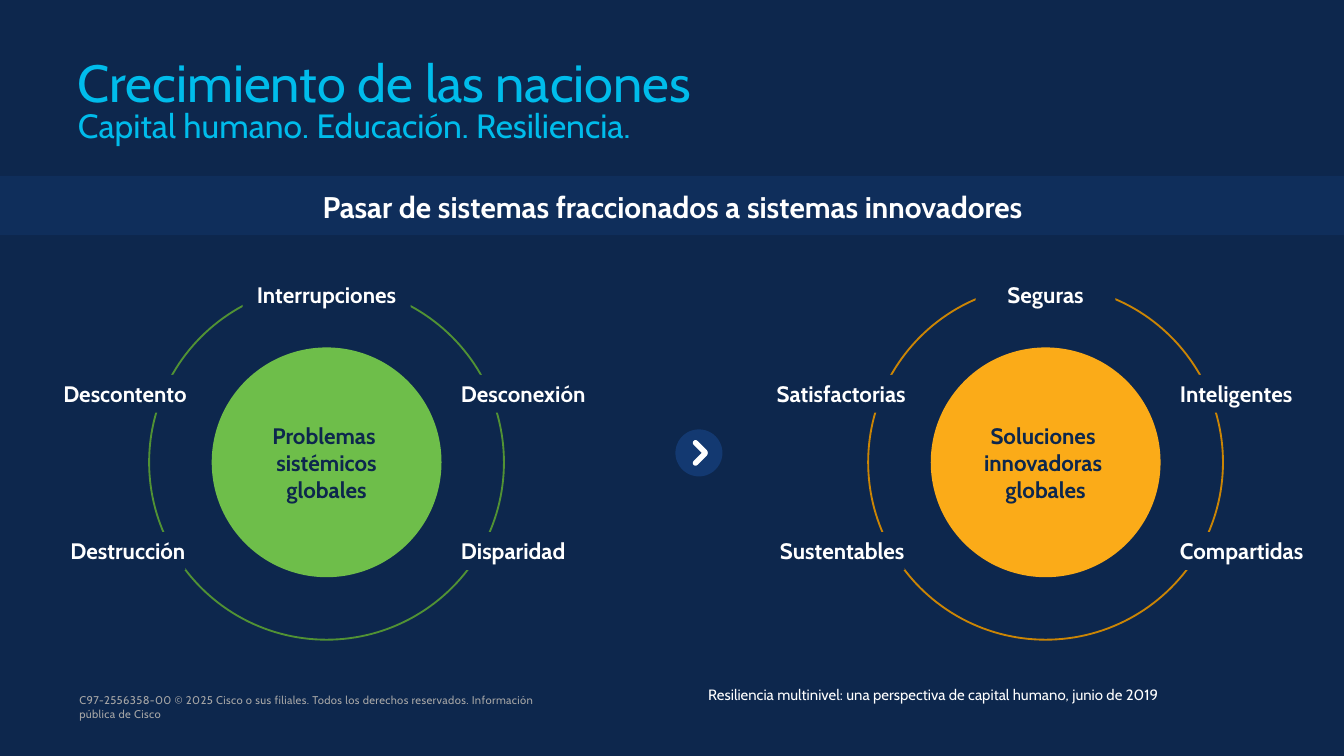
from lxml import etree
from pptx import Presentation
from pptx.dml.color import RGBColor
from pptx.enum.shapes import MSO_SHAPE
from pptx.enum.text import MSO_ANCHOR, MSO_AUTO_SIZE, PP_ALIGN
from pptx.oxml.ns import qn
from pptx.util import Inches, Pt

RECTANGLE, OVAL, ROUNDED = MSO_SHAPE.RECTANGLE, MSO_SHAPE.OVAL, MSO_SHAPE.ROUNDED_RECTANGLE
LEFT, CENTER, RIGHT = PP_ALIGN.LEFT, PP_ALIGN.CENTER, PP_ALIGN.RIGHT
TOP, MIDDLE, BOTTOM = MSO_ANCHOR.TOP, MSO_ANCHOR.MIDDLE, MSO_ANCHOR.BOTTOM
NO_FIT, GROW = MSO_AUTO_SIZE.NONE, MSO_AUTO_SIZE.SHAPE_TO_FIT_TEXT

FONT = "Cabin"
COLORS = {
    "navy": "0D274D", "blue": "133971", "cyan": "00BCEB", "white": "FFFFFF", "gray": "A6A6A6",
    "green": "6EBE4A", "dark green": "519234", "orange": "FBAB18", "dark orange": "CB8504",
}

TITLE = [("Crecimiento de las naciones", 28), ("Capital humano. Educación. Resiliencia.", 18)]
BANNER = "Pasar de sistemas fraccionados a sistemas innovadores"
SOURCE = "Resiliencia multinivel: una perspectiva de capital humano, junio de 2019"
COPYRIGHT = ("C97-2556358-00 © 2025 Cisco o sus filiales. Todos los derechos reservados. "
             "Información pública de Cisco")

# Labels are (text, width), in the order of LABEL_PLACES
WHEELS = [
    {"center": 2.43, "fill": "green", "ring": "dark green",
     "core": ["Problemas ", "sistémicos", "globales"],
     "labels": [("Descontento", 1.04), ("Interrupciones", 1.25), ("Desconexión", 1.21),
                ("Disparidad", 0.98), ("Destrucción", 0.9)]},
    {"center": 7.78, "fill": "orange", "ring": "dark orange",
     "core": ["Soluciones ", "innovadoras ", "globales"],
     "labels": [("Satisfactorias", 1.22), ("Seguras", 1.04), ("Inteligentes", 1.03),
                ("Compartidas", 1.03), ("Sustentables", 1.09)]},
]
# Anchor offset from the wheel center, top, alignment
LABEL_PLACES = [(-1.04, 2.79, RIGHT), (0, 2.05, CENTER), (1, 2.79, LEFT),
                (1, 3.96, LEFT), (-1.05, 3.96, RIGHT)]
WIDTH_SHARE = {LEFT: 0, CENTER: 0.5, RIGHT: 1}
WHEEL_Y, CORE_SIZE, RING_SIZE, LABEL_HEIGHT = 3.44, 1.71, 2.64, 0.28

ARROW_X, ARROW_Y, ARROW_SIZE = 5.2, 3.37, 0.35
BAR_X, BAR_LENGTH, BAR_WIDTH = 5.21, 0.14, 0.04
BARS = [(3.33, 45), (3.41, -45)]


def color(name):
    return RGBColor.from_string(COLORS[name])


def write(box, lines, tint="white", bold=False, align=LEFT, anchor=TOP, insets=(0, 0),
          wrap=True, fit=NO_FIT, leading=None, tracking=None):
    """Fill a box with one paragraph of (text, size) lines separated by line breaks."""
    frame = box.text_frame
    frame.word_wrap, frame.auto_size, frame.vertical_anchor = wrap, fit, anchor
    frame.margin_left = frame.margin_right = Inches(insets[0])
    frame.margin_top = frame.margin_bottom = Inches(insets[1])
    para = frame.paragraphs[0]
    para.alignment = align
    if leading:
        para.line_spacing = leading
    for index, (text, size) in enumerate(lines):
        if index:
            para.add_line_break()
        span = para.add_run()
        span.text = text
        span.font.name, span.font.size, span.font.bold = FONT, Pt(size), bold
        span.font.color.rgb = color(tint)
        if tracking:
            span.font._element.set("spc", str(tracking))


def add_text(page, left, top, width, height, lines, **style):
    box = page.shapes.add_textbox(Inches(left), Inches(top), Inches(width), Inches(height))
    write(box, lines, **style)


def add_shape(page, kind, left, top, width, height, fill=None, line=None):
    shape = page.shapes.add_shape(kind, Inches(left), Inches(top), Inches(width), Inches(height))
    shape.shadow.inherit = False
    if fill:
        shape.fill.solid()
        shape.fill.fore_color.rgb = color(fill)
    else:
        shape.fill.background()
    if line:
        shape.line.color.rgb = color(line)
        shape.line.width = Pt(1)
    else:
        shape.line.fill.background()
    return shape


def add_centered(page, kind, x, y, width, height, **style):
    return add_shape(page, kind, x - width / 2, y - height / 2, width, height, **style)


def add_wheel(page, wheel):
    center = wheel["center"]
    core = add_centered(page, OVAL, center, WHEEL_Y, CORE_SIZE, CORE_SIZE, fill=wheel["fill"])
    write(core, [(text, 12) for text in wheel["core"]], tint="navy", bold=True,
          align=CENTER, anchor=MIDDLE, wrap=False)
    add_centered(page, OVAL, center, WHEEL_Y, RING_SIZE, RING_SIZE, line=wheel["ring"])
    for (text, width), (offset, top, align) in zip(wheel["labels"], LABEL_PLACES):
        left = center + offset - width * WIDTH_SHARE[align]
        label = add_shape(page, RECTANGLE, left, top, width, LABEL_HEIGHT, fill="navy")
        write(label, [(text, 12)], bold=True, align=align, insets=(0, 0.04), fit=GROW)


def add_arrow(page):
    add_centered(page, OVAL, ARROW_X, ARROW_Y, ARROW_SIZE, ARROW_SIZE, fill="blue")
    for y, angle in BARS:
        bar = add_centered(page, ROUNDED, BAR_X, y, BAR_LENGTH, BAR_WIDTH, fill="white")
        bar.adjustments[0] = 0.5
        bar.rotation = angle


def main():
    deck = Presentation()
    deck.slide_width = Inches(10)
    deck.slide_height = deck.slide_width * 9 // 16
    page = deck.slides.add_slide(deck.slide_layouts[5])
    page.background.fill.solid()
    page.background.fill.fore_color.rgb = color("navy")

    title = page.shapes.title
    title.left, title.top, title.width, title.height = map(Inches, (0.48, 0.37, 9.13, 0.8))
    write(title, TITLE, tint="cyan", anchor=MIDDLE, insets=(0.1, 0.05), leading=0.8)

    band = add_shape(page, RECTANGLE, 0, 1.31, 10, 0.44, fill="blue")
    tint = band._element.spPr.find(qn("a:solidFill"))[0]
    etree.SubElement(tint, qn("a:alpha"), val="40000")
    add_text(page, 0.57, 1.3, 8.87, 0.47, [(BANNER, 16)], bold=True, align=CENTER, anchor=MIDDLE)

    for wheel in WHEELS:
        add_wheel(page, wheel)
    add_arrow(page)

    add_text(page, 5.27, 5.1, 3.83, 0.13, [(SOURCE, 8)], fit=GROW)
    add_text(page, 0.52, 5.12, 3.62, 0.27, [(COPYRIGHT, 6)], tint="gray", anchor=BOTTOM,
             insets=(0.07, 0.03), fit=GROW, tracking=20)
    deck.save("out.pptx")


if __name__ == "__main__":
    main()
